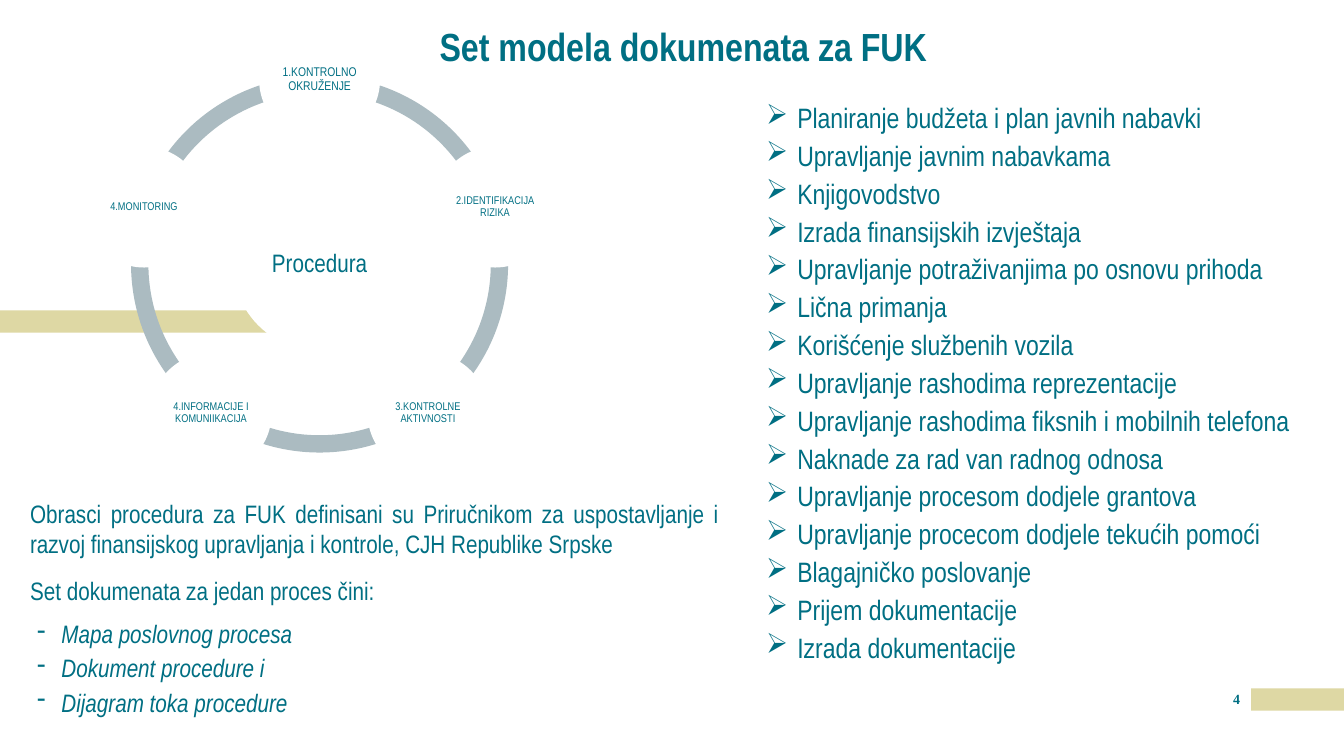
"""Build the slide on the set of document models for FUK."""
import math

import lxml.etree
import pptx
import pptx.dml.color
import pptx.enum.shapes
import pptx.enum.text
import pptx.oxml.ns
import pptx.util

Inches = pptx.util.Inches
Pt = pptx.util.Pt
RGB = pptx.dml.color.RGBColor
Align = pptx.enum.text.PP_ALIGN
Anchor = pptx.enum.text.MSO_ANCHOR
Fit = pptx.enum.text.MSO_AUTO_SIZE
Kind = pptx.enum.shapes.MSO_SHAPE
qn = pptx.oxml.ns.qn

TEAL = RGB(0x00, 0x6F, 0x83)
SAND = RGB(0xDE, 0xD8, 0xA4)
GREY = RGB(0xAB, 0xBB, 0xC1)
WHITE = RGB(0xFF, 0xFF, 0xFF)

MODELS = [
    "Planiranje budžeta i plan javnih nabavki",
    "Upravljanje javnim nabavkama",
    "Knjigovodstvo",
    "Izrada finansijskih izvještaja",
    "Upravljanje potraživanjima po osnovu prihoda",
    "Lična primanja",
    "Korišćenje službenih vozila",
    "Upravljanje rashodima reprezentacije",
    "Upravljanje rashodima fiksnih i mobilnih telefona",
    "Naknade za rad van radnog odnosa",
    "Upravljanje procesom dodjele grantova",
    "Upravljanje procecom dodjele tekućih pomoći",
    "Blagajničko poslovanje",
    "Prijem dokumentacije",
    "Izrada dokumentacije",
]
STEPS = [
    ("1.KONTROLNO OKRUŽENJE", 9),
    ("2.IDENTIFIKACIJA RIZIKA", 8),
    ("3.KONTROLNE AKTIVNOSTI", 8),
    ("4.INFORMACIJE I KOMUNIIKACIJA", 8),
    ("4.MONITORING", 8),
]
PARTS = ["Mapa poslovnog procesa", "Dokument procedure i", "Dijagram toka procedure"]


class Board:
    """Hold the style and the current slide."""

    def __init__(self, slide, font, color):
        self.home = slide.shapes
        self.font = font
        self.color = color

    def shape(self, kind, left, top, width, height, fill, adjust=()):
        item = self.home.add_shape(
            kind, Inches(left), Inches(top), Inches(width), Inches(height))
        item.shadow.inherit = False
        item.fill.solid()
        item.fill.fore_color.rgb = fill
        item.line.fill.background()
        for index, value in enumerate(adjust):
            item.adjustments[index] = value

    def box(self, left, top, width, height, inset=None, anchor=Anchor.TOP, grow=False):
        item = self.home.add_textbox(
            Inches(left), Inches(top), Inches(width), Inches(height))
        frame = item.text_frame
        frame.word_wrap = True
        frame.auto_size = Fit.SHAPE_TO_FIT_TEXT if grow else Fit.NONE
        frame.vertical_anchor = anchor
        if inset is not None:
            frame.margin_left = frame.margin_right = Inches(inset)
            frame.margin_top = frame.margin_bottom = Inches(inset)
        return frame

    def text(self, frame, words, size=18, font=None, bold=False, italic=False,
             align=Align.LEFT, line=None, before=0, after=0,
             indent=0, hang=0, bullet=None):
        first = not frame.paragraphs[0].runs
        para = frame.paragraphs[0] if first else frame.add_paragraph()
        props = para._p.get_or_add_pPr()
        props.set("marL", str(Inches(indent)))
        props.set("indent", str(-Inches(hang)))
        if bullet:
            mark = lxml.etree.SubElement(props, qn("a:buChar"))
            mark.set("char", bullet)
        para.alignment = align
        para.space_after = Pt(after)
        if before:
            para.space_before = Pt(before)
        if line:
            para.line_spacing = line
        run = para.add_run()
        run.text = words
        run.font.size = Pt(size)
        run.font.name = font or self.font
        run.font.bold = bold
        run.font.italic = italic
        run.font.color.rgb = self.color

    def cycle(self, steps, mid_x, mid_y):
        page = self.home
        self.home = page.add_group_shape().shapes
        step = 360 / len(steps)
        angles = [(270 + step * i) % 360 for i in range(len(steps))]
        for angle in reversed(angles):
            ends = (angle * 0.6, (angle + step) % 360 * 0.6, 0.046)
            self.shape(Kind.BLOCK_ARC, mid_x - 1.87, mid_y - 1.87, 3.74, 3.74, GREY, ends)
        self.node("Procedura", 18, mid_x, mid_y, 1.72, 1.22, 0.03)
        for (words, size), angle in zip(steps, angles):
            turn = math.radians(angle)
            self.node(words, size, mid_x + 1.83 * math.cos(turn),
                      mid_y + 1.83 * math.sin(turn), 1.2, 0.86, 0.01)
        self.home = page

    def node(self, words, size, mid_x, mid_y, outer, inner, inset):
        self.shape(Kind.OVAL, mid_x - outer / 2, mid_y - outer / 2, outer, outer, WHITE)
        frame = self.box(mid_x - inner / 2, mid_y - inner / 2, inner, inner,
                         inset, Anchor.MIDDLE)
        self.text(frame, words, size=size, align=Align.CENTER, line=0.9)


def main():
    deck = pptx.Presentation()
    deck.slide_width = Inches(13.33)
    deck.slide_height = Inches(7.5)
    board = Board(deck.slides.add_slide(deck.slide_layouts[6]), "Arial Narrow", TEAL)

    board.shape(Kind.RECTANGLE, 12.41, 6.83, 0.92, 0.22, SAND)
    board.shape(Kind.RECTANGLE, 0, 3.08, 3.35, 0.22, SAND)
    board.text(board.box(12.12, 6.85, 0.29, 0.25, 0), "4", size=10,
               font="Times New Roman", bold=True, align=Align.CENTER)
    board.text(board.box(4.36, 0.1, 7.24, 0.59, 0, Anchor.BOTTOM),
               "Set modela dokumenata za FUK", size=28, bold=True, line=0.9)

    models = board.box(7.5, 0.95, 6.16, 5.74, grow=True)
    for words in MODELS:
        board.text(models, words, size=20, after=3, indent=0.31, hang=0.31, bullet="➢")

    board.cycle(STEPS, 3.17, 2.62)

    notes = board.box(0.04, 4.89, 7.19, 2.3, grow=True)
    board.text(notes, "Obrasci procedura za FUK definisani su Priručnikom za "
               "uspostavljanje i razvoj finansijskog upravljanja i kontrole, "
               "CJH Republike Srpske", align=Align.JUSTIFY, after=6, indent=0.16)
    board.text(notes, "Set dokumenata za jedan proces čini:",
               before=6, after=6, indent=0.16)
    for words in PARTS:
        board.text(notes, words, italic=True, before=3, indent=0.47, hang=0.24, bullet="-")

    deck.save("out.pptx")


if __name__ == "__main__":
    main()
